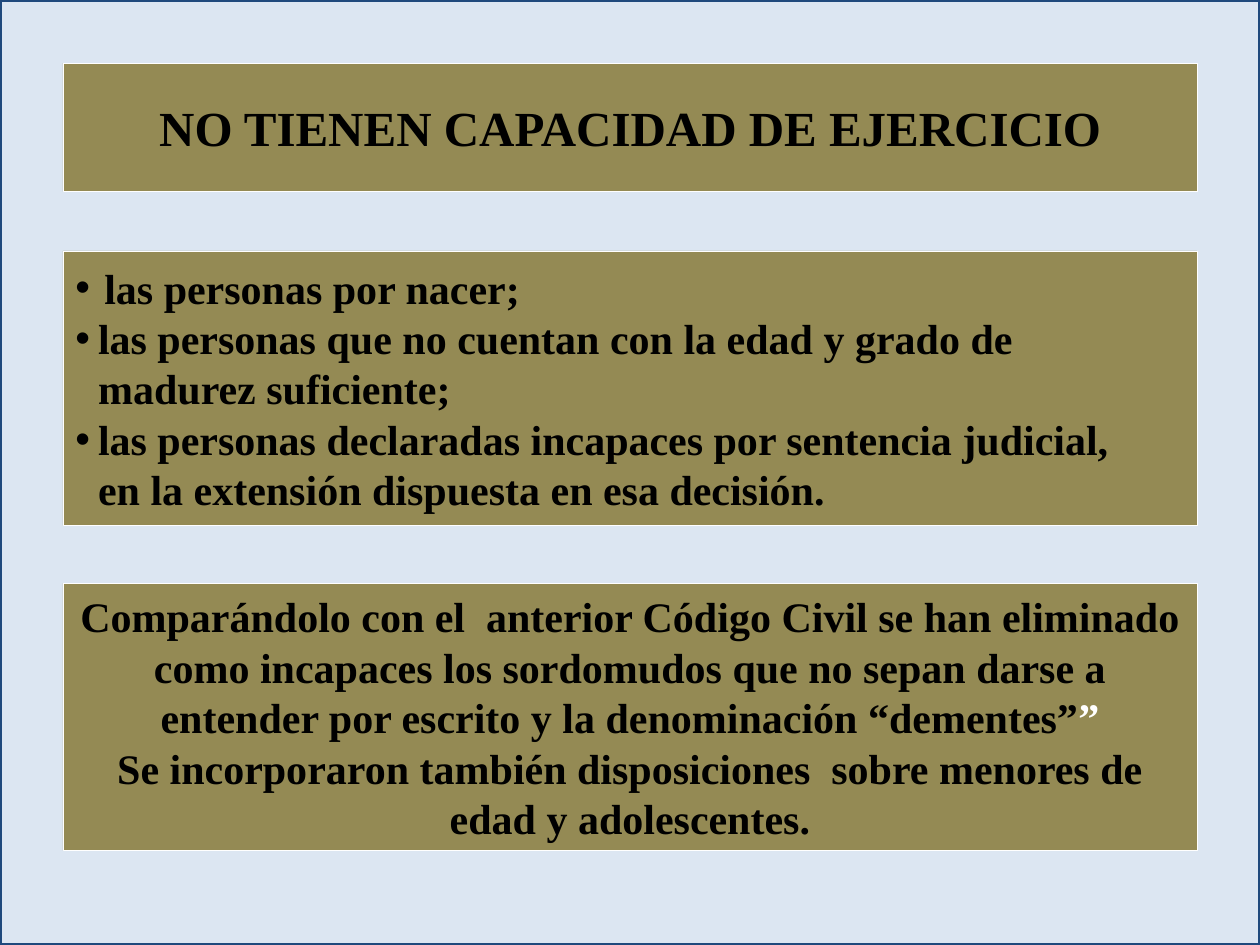
from dataclasses import dataclass

from lxml.etree import SubElement
from pptx import Presentation
from pptx.dml.color import RGBColor
from pptx.enum.shapes import MSO_SHAPE
from pptx.enum.text import MSO_ANCHOR, PP_ALIGN
from pptx.oxml.ns import qn
from pptx.util import Inches, Pt


@dataclass(frozen=True)
class Theme:
    """Colours, type sizes and line widths of the deck."""
    font: str = "Times New Roman"
    ink: str = "000000"
    light: str = "FFFFFF"
    panel: str = "948A54"
    page: str = "DCE6F2"
    frame: str = "1F497D"
    title: int = 28
    body: int = 24
    small: int = 20
    thin: float = 0.25
    thick: float = 2


THEME = Theme()
WIDTH, HEIGHT = Inches(10), Inches(7.5)
MARGIN, INNER = 0.05, 0.9

TITLE = "NO TIENEN CAPACIDAD DE EJERCICIO"
PERSONS = [
    ("las personas por nacer;", 0.23, THEME.small),
    ("las personas que no cuentan con la edad y grado de\vmadurez suficiente;", 0.18, THEME.body),
    ("las personas declaradas incapaces por sentencia judicial,\ven la extensión dispuesta en esa decisión.", 0.18, THEME.body),
]
COMPARISON = (
    "Comparándolo con el  anterior Código Civil se han eliminado como incapaces "
    "los sordomudos que no sepan darse a entender por escrito y la denominación “dementes”"
)
ADDITION = "Se incorporaron también disposiciones  sobre menores de edad y adolescentes."


def write(para, text, size=THEME.body, color=THEME.ink, align=PP_ALIGN.CENTER):
    """Append formatted text to a paragraph, with line breaks at vertical tabs."""
    para.alignment = align
    for number, line in enumerate(text.split("\v")):
        if number:
            para.add_line_break()
        span = para.add_run()
        span.text = line
        span.font.name = THEME.font
        span.font.size = Pt(size)
        span.font.bold = True
        span.font.color.rgb = RGBColor.from_string(color)


def add_bullet(para, indent, size):
    """Give a paragraph a hanging bullet of the given size."""
    properties = para._p.get_or_add_pPr()
    properties.set("marL", str(Inches(indent)))
    properties.set("indent", str(-Inches(indent)))
    SubElement(properties, qn("a:buSzPts")).set("val", str(size * 100))
    SubElement(properties, qn("a:buFont")).set("typeface", "Arial")
    SubElement(properties, qn("a:buChar")).set("char", "•")


def add_panel(page, box, fill=THEME.panel, line=THEME.light, weight=THEME.thin):
    """Draw a rectangle at shares of the slide and return its text frame."""
    left, top, width, height = box
    panel = page.shapes.add_shape(
        MSO_SHAPE.RECTANGLE,
        round(left * WIDTH), round(top * HEIGHT),
        round(width * WIDTH), round(height * HEIGHT),
    )
    panel.shadow.inherit = False
    panel.fill.solid()
    panel.fill.fore_color.rgb = RGBColor.from_string(fill)
    panel.line.color.rgb = RGBColor.from_string(line)
    panel.line.width = Pt(weight)
    frame = panel.text_frame
    frame.word_wrap = True
    frame.vertical_anchor = MSO_ANCHOR.MIDDLE
    return frame


def add_title(page, box):
    """Place the heading panel."""
    write(add_panel(page, box).paragraphs[0], TITLE, size=THEME.title)


def add_persons(page, box):
    """Place the bulleted list of persons."""
    frame = add_panel(page, box)
    for number, (text, indent, size) in enumerate(PERSONS):
        para = frame.add_paragraph() if number else frame.paragraphs[0]
        add_bullet(para, indent, size)
        write(para, text, align=PP_ALIGN.LEFT)


def add_comparison(page, box):
    """Place the comparison with the former code."""
    frame = add_panel(page, box)
    write(frame.paragraphs[0], COMPARISON)
    write(frame.paragraphs[0], "”", color=THEME.light)
    write(frame.add_paragraph(), ADDITION)


def main():
    """Build and save the deck."""
    deck = Presentation()
    deck.slide_width, deck.slide_height = WIDTH, HEIGHT
    page = deck.slides.add_slide(deck.slide_layouts[6])
    add_panel(page, (0, 0, 1, 1), fill=THEME.page, line=THEME.frame, weight=THEME.thick)
    add_title(page, (MARGIN, 0.5 / 7.5, INNER, 1.02 / 7.5))
    add_persons(page, (MARGIN, 1.99 / 7.5, INNER, 2.18 / 7.5))
    add_comparison(page, (MARGIN, 4.63 / 7.5, INNER, 2.12 / 7.5))
    deck.save("out.pptx")


if __name__ == "__main__":
    main()
